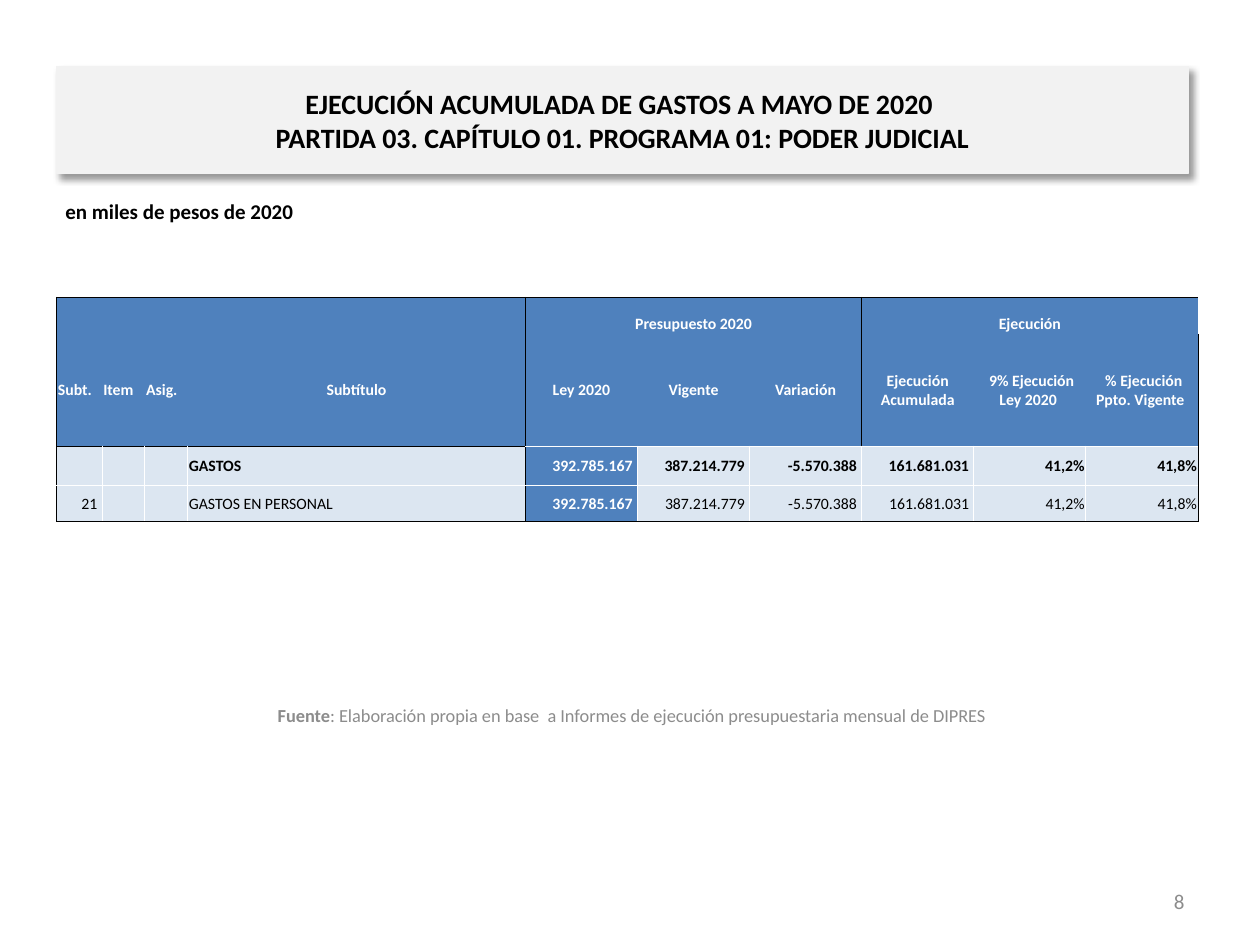
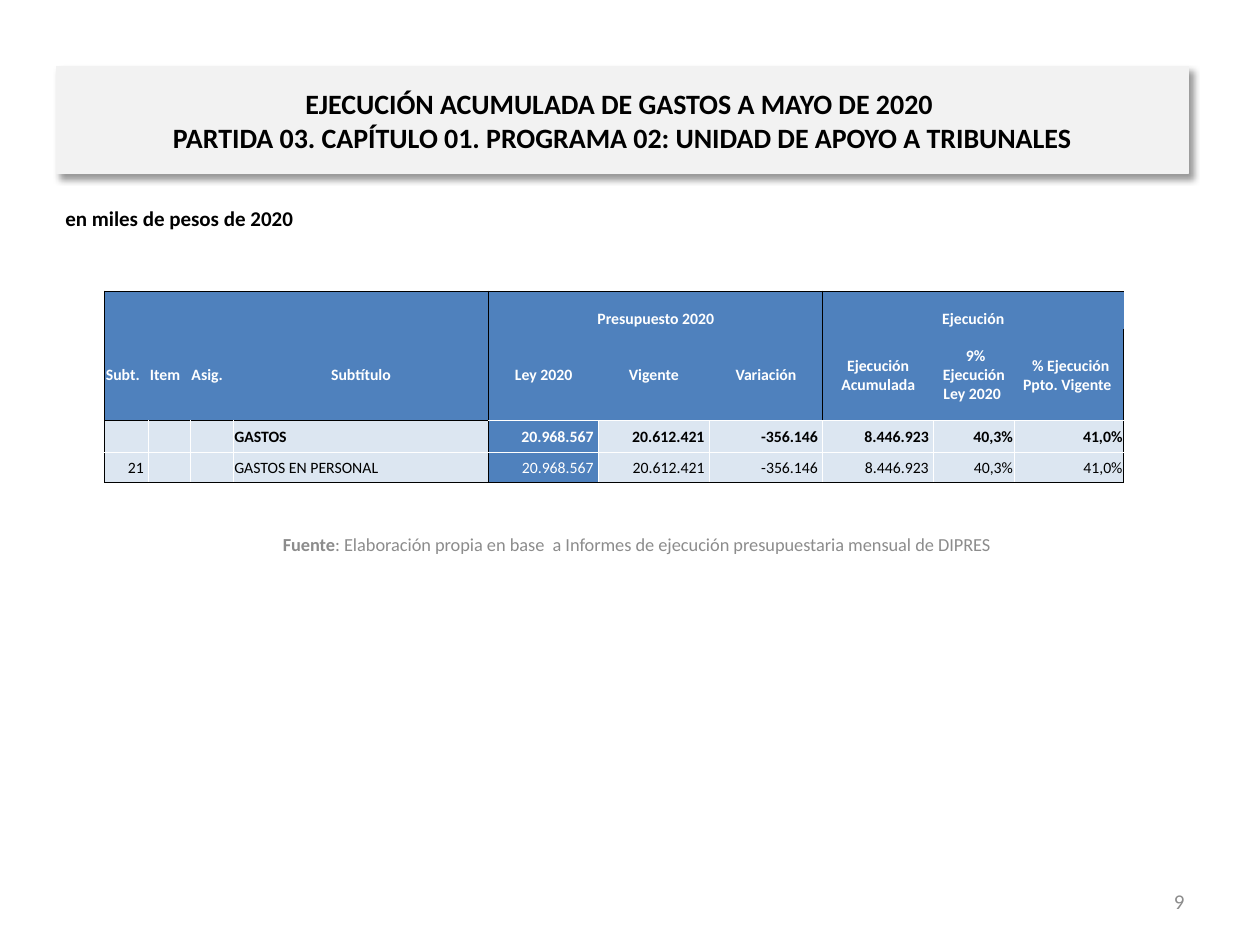
import pptx
import pptx.util
import pptx.dml.color
import pptx.enum.shapes
import pptx.enum.text
import pptx.oxml
import pptx.oxml.ns
from lxml import etree

Inches = pptx.util.Inches
Pt = pptx.util.Pt
RGB = pptx.dml.color.RGBColor.from_string
qn = pptx.oxml.ns.qn
ALIGN = pptx.enum.text.PP_ALIGN
MID = pptx.enum.text.MSO_ANCHOR.MIDDLE
LOW = pptx.enum.text.MSO_ANCHOR.BOTTOM
TOP = pptx.enum.text.MSO_ANCHOR.TOP

THEME = {
    "font": "Calibri",
    "black": "000000", "white": "FFFFFF", "gray": "8C8C8C",
    "band": "F2F2F2", "head": "4F81BD", "body": "DCE6F1",
    "title": 16, "note": 12, "source": 10.5, "cell": 9,
}
NO_GRID = "{2D5ABB26-0587-4C30-8999-92F81FD0307C}"

HEADS = ["Subt.", "Item", "Asig.", "Subtítulo", "Ley 2020", "Vigente", "Variación",
         "Ejecución Acumulada", " 9% Ejecución Ley 2020 ", " % Ejecución Ppto. Vigente "]
GROUPS = ["", "", "", "", "Presupuesto 2020", "", "", "Ejecución", "", ""]

PAGES = [
    {
        "number": "8",
        "program": "PARTIDA 03. CAPÍTULO 01. PROGRAMA 01: PODER JUDICIAL",
        "note top": 1.53,
        "source at": (0.42, 5.48),
        "table at": (0.45, 2.36),
        "widths": [0.36, 0.34, 0.34, 2.68] + [0.89] * 6,
        "heights": [0.29, 0.89, 0.31, 0.29],
        "values": ["392.785.167 ", "387.214.779 ", "-5.570.388 ", "161.681.031 ",
                   "41,2%", "41,8%"],
        "bold law": True,
    },
    {
        "number": "9",
        "program": "PARTIDA 03. CAPÍTULO 01. PROGRAMA 02: UNIDAD DE APOYO A TRIBUNALES",
        "note top": 1.58,
        "source at": (0.46, 4.12),
        "table at": (0.83, 2.31),
        "widths": [0.35, 0.33, 0.34, 2.03, 0.87, 0.88, 0.9, 0.88, 0.64, 0.87],
        "heights": [0.3, 0.73, 0.25, 0.24],
        "values": ["20.968.567 ", "20.612.421 ", "-356.146 ", "8.446.923 ",
                   "40,3%", "41,0%"],
        "bold law": False,
    },
]


def write(frame, parts, size, color, align=ALIGN.LEFT, anchor=MID):
    """Fill a text frame with (text, bold) parts; a newline breaks the line."""
    frame.word_wrap = True
    frame.vertical_anchor = anchor
    para = frame.paragraphs[0]
    para.alignment = align
    for text, bold in parts:
        for i, line in enumerate(text.split("\n")):
            if i:
                para.add_line_break()
            run = para.add_run()
            run.text = line
            style = {"name": THEME["font"], "size": Pt(THEME[size]), "bold": bold}
            for key, value in style.items():
                setattr(run.font, key, value)
            run.font.color.rgb = RGB(THEME[color])


def border(cell, row, col):
    """Draw the four edges of a cell by its place in the grid."""
    props = cell._tc.get_or_add_tcPr()
    edges = {}
    for tag, x in (("a:lnL", col), ("a:lnR", col + 1)):
        dark = x in (0, 4, 10) or (x == 7 and row < 2)
        edges[tag] = "black" if dark else "white" if row > 1 else None
    for tag, y in (("a:lnT", row), ("a:lnB", row + 1)):
        dark = y in (0, 4) or (y == 2 and col < 4)
        edges[tag] = "black" if dark else "white" if y > 1 else None
    for tag, color in edges.items():
        line = etree.SubElement(props, qn(tag), w=str(Pt(0.5)))
        if color:
            fill = etree.SubElement(line, qn("a:solidFill"))
            etree.SubElement(fill, qn("a:srgbClr"), val=THEME[color])
        else:
            etree.SubElement(line, qn("a:noFill"))


deck = pptx.Presentation()
deck.slide_width, deck.slide_height = Inches(10), Inches(7.5)

for page in PAGES:
    slide = deck.slides.add_slide(deck.slide_layouts[6])

    # Source, page number and unit note
    texts = [
        ((*page["source at"], 9.19, 0.4),
         [("Fuente", True),
          (": Elaboración propia en base  a Informes de ejecución presupuestaria"
           " mensual de DIPRES", False)], "source", "gray", ALIGN.CENTER, MID),
        ((7.17, 6.95, 2.33, 0.4), [(page["number"], False)],
         "note", "gray", ALIGN.RIGHT, MID),
        ((0.42, page["note top"], 9, 0.5), [("en miles de pesos de 2020", True)],
         "note", "black", ALIGN.LEFT, TOP),
    ]
    for place, *rest in texts:
        box = slide.shapes.add_textbox(*map(Inches, place))
        write(box.text_frame, *rest)

    # Title band
    band = slide.shapes.add_shape(pptx.enum.shapes.MSO_SHAPE.RECTANGLE,
                                  *map(Inches, (0.45, 0.53, 8.98, 0.85)))
    band.fill.solid()
    band.fill.fore_color.rgb = band.line.color.rgb = RGB(THEME["band"])
    band.line.width = Pt(0.75)
    band.shadow.inherit = False
    glow = etree.SubElement(band._element.spPr.find(qn("a:effectLst")),
                            qn("a:outerShdw"), blurRad=str(Pt(4)), dist=str(Pt(3)),
                            dir=str(45 * 60000), algn="tl", rotWithShape="0")
    tint = etree.SubElement(glow, qn("a:srgbClr"), val=THEME["black"])
    etree.SubElement(tint, qn("a:alpha"), val="40000")
    band.text_frame.margin_left = band.text_frame.margin_right = Inches(0.11)
    title = "EJECUCIÓN ACUMULADA DE GASTOS A MAYO DE 2020 \n" + page["program"]
    write(band.text_frame, [(title, True)], "title", "black", ALIGN.CENTER)

    # Budget table
    rows = [GROUPS, HEADS,
            ["", "", "", "GASTOS"] + page["values"],
            ["21 ", "", "", "GASTOS EN PERSONAL"] + page["values"]]
    size = (sum(page["widths"]), sum(page["heights"]))
    table = slide.shapes.add_table(len(rows), len(HEADS),
                                   *map(Inches, page["table at"] + size)).table
    table.first_row = table.horz_banding = False
    table._tbl.tblPr.find(qn("a:tableStyleId")).text = NO_GRID
    for column, width in zip(table.columns, page["widths"]):
        column.width = Inches(width)
    for line, height in zip(table.rows, page["heights"]):
        line.height = Inches(height)
    for first in (4, 7):
        table.cell(0, first).merge(table.cell(0, first + 2))

    for r, row in enumerate(rows):
        for c, text in enumerate(row):
            cell = table.cell(r, c)
            margins = {"margin_left": 0.01, "margin_top": 0.01,
                       "margin_right": 0.01, "margin_bottom": 0}
            for key, value in margins.items():
                setattr(cell, key, Inches(value))
            border(cell, r, c)
            blue = r < 2 or c == 4
            cell.fill.solid()
            cell.fill.fore_color.rgb = RGB(THEME["head" if blue else "body"])
            if not text:
                etree.SubElement(cell.text_frame.paragraphs[0]._p, qn("a:endParaRPr"),
                                 sz=str(THEME["cell"] * 100))
                continue
            if r < 2:
                align = ALIGN.LEFT if c < 3 else ALIGN.CENTER
            else:
                align = ALIGN.LEFT if c == 3 else ALIGN.RIGHT
            bold = r < 3 or (c == 4 and page["bold law"])
            write(cell.text_frame, [(text, bold)], "cell",
                  "white" if blue else "black", align)
            cell.vertical_anchor = MID if r else LOW

deck.save("out.pptx")
